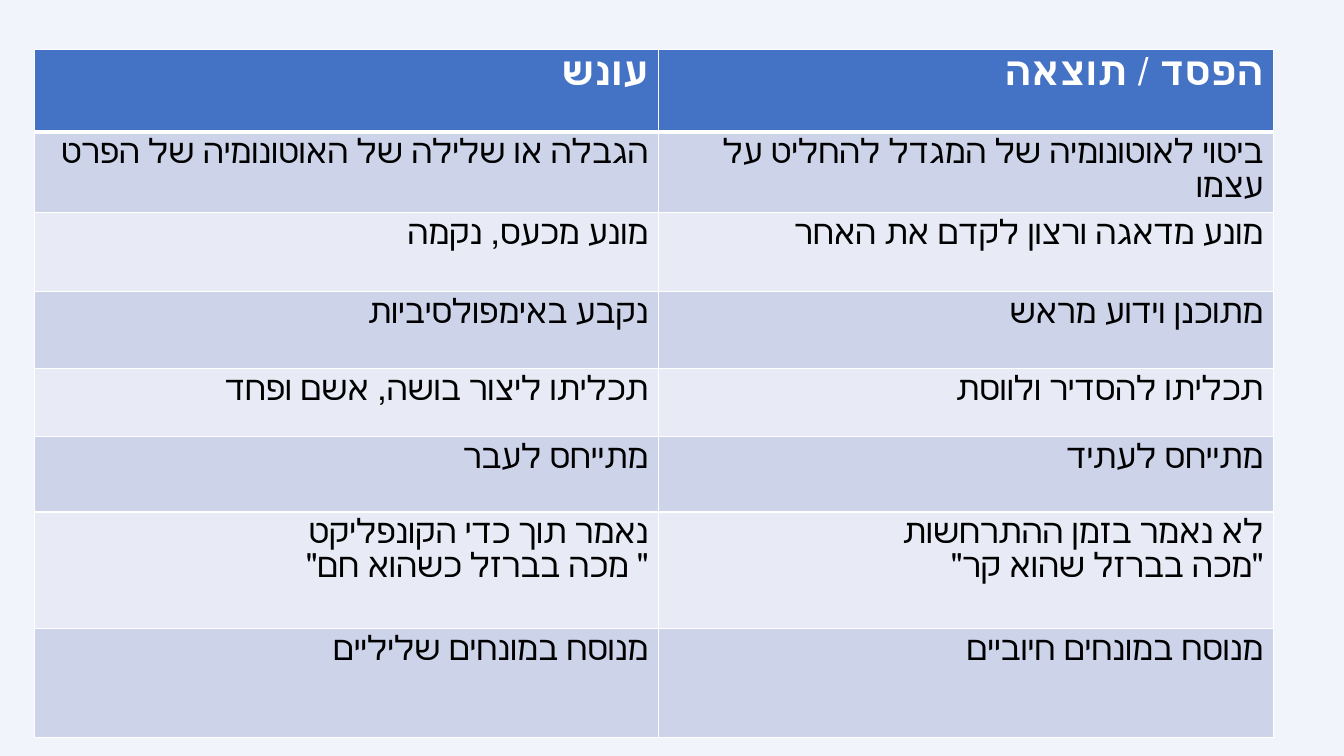
from lxml.etree import SubElement
from pptx import Presentation
from pptx.dml.color import RGBColor
from pptx.enum.lang import MSO_LANGUAGE_ID
from pptx.enum.text import PP_ALIGN
from pptx.oxml.ns import qn
from pptx.util import Inches, Pt

COLORS = {
    "background": "F1F5FB",
    "header": "4472C4",
    "odd": "CDD4EA",
    "even": "E8EBF5",
    "border": "FFFFFF",
    "header_text": "FFFFFF",
    "body_text": "000000",
}

# Row height, font, punishment cell, consequence cell
ROWS = [
    (0.82, "Arial", "עונש", "הפסד / תוצאה"),
    (0.8, "Calibri", "הגבלה או שלילה של האוטונומיה של הפרט",
     "ביטוי לאוטונומיה של המגדל להחליט על עצמו"),
    (0.78, "Arial", "מונע מכעס, נקמה", "מונע מדאגה ורצון לקדם את האחר"),
    (0.77, "Arial", "נקבע באימפולסיביות", "מתוכנן וידוע מראש"),
    (0.67, "Calibri", "תכליתו ליצור בושה, אשם ופחד", "תכליתו להסדיר ולווסת"),
    (0.75, "Arial", "מתייחס לעבר", "מתייחס לעתיד"),
    (1.16, "Arial", "נאמר תוך כדי הקונפליקט\n\" מכה בברזל כשהוא חם\"",
     "לא נאמר בזמן ההתרחשות\n\"מכה בברזל שהוא קר\""),
    (1.08, "Arial", "מנוסח במונחים שליליים", "מנוסח במונחים חיוביים"),
]
COLUMN_WIDTHS = (6.19, 6.1)
TABLE_LEFT, TABLE_TOP = 0.34, 0.49


def color(name):
    return RGBColor.from_string(COLORS[name])


def add_borders(cell, bottom_width, top_width):
    properties = cell._tc.get_or_add_tcPr()
    widths = {"a:lnL": 1, "a:lnR": 1, "a:lnT": top_width, "a:lnB": bottom_width}
    for tag, width in widths.items():
        line = SubElement(properties, qn(tag), w=str(Pt(width)))
        fill = SubElement(line, qn("a:solidFill"))
        SubElement(fill, qn("a:srgbClr"), val=COLORS["border"])


def write_cell(cell, text, font_format, text_color):
    cell.text = text
    for paragraph in cell.text_frame.paragraphs:
        paragraph.alignment = PP_ALIGN.RIGHT
        paragraph._p.get_or_add_pPr().set("rtl", "1")
        for run in paragraph.runs:
            for attribute, value in font_format.items():
                setattr(run.font, attribute, value)
            run.font.color.rgb = color(text_color)


def main():
    presentation = Presentation()
    presentation.slide_width = Inches(13.33)
    presentation.slide_height = Inches(7.5)
    slide = presentation.slides.add_slide(presentation.slide_layouts[6])
    slide.background.fill.solid()
    slide.background.fill.fore_color.rgb = color("background")

    table = slide.shapes.add_table(
        len(ROWS), len(COLUMN_WIDTHS), Inches(TABLE_LEFT), Inches(TABLE_TOP),
        Inches(sum(COLUMN_WIDTHS)), Inches(sum(row[0] for row in ROWS))).table
    for column, width in zip(table.columns, COLUMN_WIDTHS):
        column.width = Inches(width)

    for index, (height, font_name, *texts) in enumerate(ROWS):
        table.rows[index].height = Inches(height)
        is_header = index == 0
        band = "header" if is_header else ("even", "odd")[index % 2]
        font_format = {
            "name": font_name,
            "size": Pt(28 if is_header else 24),
            "bold": is_header,
            "language_id": MSO_LANGUAGE_ID.HEBREW,
        }
        for column_index, text in enumerate(texts):
            cell = table.cell(index, column_index)
            add_borders(cell, 3 if is_header else 1, 3 if index == 1 else 1)
            cell.fill.solid()
            cell.fill.fore_color.rgb = color(band)
            write_cell(cell, text, font_format,
                       "header_text" if is_header else "body_text")

    presentation.save("out.pptx")


if __name__ == "__main__":
    main()
